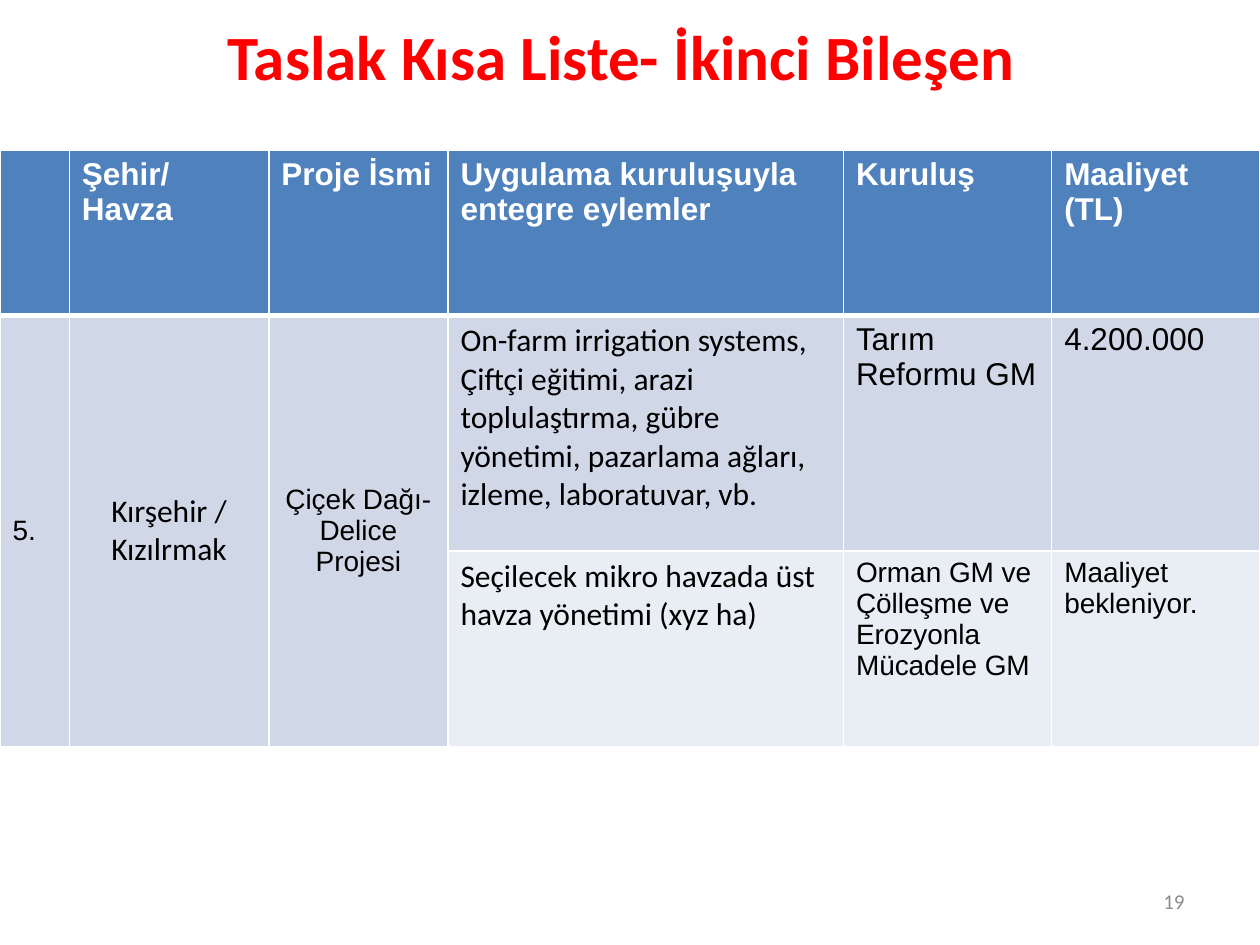
import pptx
import pptx.dml.color
import pptx.enum.text
import pptx.oxml
import pptx.oxml.ns
import pptx.util

Pt = pptx.util.Pt
RGBColor = pptx.dml.color.RGBColor
ALIGN = pptx.enum.text.PP_ALIGN
MIDDLE = pptx.enum.text.MSO_ANCHOR.MIDDLE
TOP = pptx.enum.text.MSO_ANCHOR.TOP

RED = RGBColor(0xFF, 0x00, 0x00)
GREY = RGBColor(0x8C, 0x8C, 0x8C)
WHITE = RGBColor(0xFF, 0xFF, 0xFF)
BLACK = RGBColor(0x00, 0x00, 0x00)
HEADER_BLUE = RGBColor(0x4F, 0x81, 0xBD)
BAND_DARK = RGBColor(0xD0, 0xD8, 0xE8)
BAND_LIGHT = RGBColor(0xE9, 0xED, 0xF4)

COLUMN_WIDTHS = (39.6, 114, 102.4, 226, 119, 119)
ROW_HEIGHTS = (94.3, 134.6, 111.6)
ROW_FILLS = (HEADER_BLUE, BAND_DARK, BAND_LIGHT)
MERGED_COLUMNS = 3

HEADINGS = ("", "Şehir/Havza", "Proje İsmi", "Uygulama kuruluşuyla entegre eylemler",
            "Kuruluş", "Maaliyet (TL)")
PROJECT_ROWS = (
    (("5.", "Arial", 16, ALIGN.LEFT),
     ("Kırşehir / Kızılrmak", "Calibri", 18, ALIGN.CENTER),
     ("Çiçek Dağı- Delice Projesi", "Arial", 16, ALIGN.CENTER),
     ("On-farm irrigation systems, Çiftçi eğitimi, arazi toplulaştırma, gübre yönetimi, "
      "pazarlama ağları, izleme, laboratuvar, vb.", "Calibri", 18, ALIGN.LEFT),
     ("Tarım Reformu GM", "Arial", 18, ALIGN.LEFT),
     ("4.200.000", "Arial", 18, ALIGN.LEFT)),
    (("Seçilecek mikro havzada üst havza yönetimi (xyz ha)", "Calibri", 18, ALIGN.LEFT),
     ("Orman GM ve Çölleşme ve Erozyonla Mücadele GM", "Arial", 16, ALIGN.LEFT),
     ("Maaliyet bekleniyor.", "Arial", 16, ALIGN.LEFT)),
)


def write_text(frame, wording, align, color, font_format):
    """Write one formatted paragraph into a text frame."""
    paragraph = frame.paragraphs[0]
    paragraph.alignment = align
    run = paragraph.add_run()
    run.text = wording
    for name, value in font_format.items():
        setattr(run.font, name, value)
    run.font.color.rgb = color


def add_label(slide, bounds, wording, align, color, font_format):
    """Add a wrapped, vertically centred text box."""
    label = slide.shapes.add_textbox(*(Pt(length) for length in bounds))
    label.text_frame.word_wrap = True
    label.text_frame.vertical_anchor = MIDDLE
    write_text(label.text_frame, wording, align, color, font_format)


def style_cell(cell, row, fill):
    """Give a cell white borders, heavier under the header, and its fill."""
    widths = {"L": 1, "R": 1, "T": 3 if row == 1 else 1, "B": 3 if row == 0 else 1}
    properties = cell._tc.get_or_add_tcPr()
    for side, width in widths.items():
        properties.append(pptx.oxml.parse_xml(
            f'<a:ln{side} {pptx.oxml.ns.nsdecls("a")} w="{Pt(width)}"><a:solidFill>'
            f'<a:srgbClr val="{WHITE}"/></a:solidFill></a:ln{side}>'))
    cell.fill.solid()
    cell.fill.fore_color.rgb = fill


def add_project_table(slide):
    """Add the table of projects, actions, institutions and costs."""
    frame = slide.shapes.add_table(len(ROW_HEIGHTS), len(COLUMN_WIDTHS), 0, Pt(86),
                                   Pt(sum(COLUMN_WIDTHS)), Pt(sum(ROW_HEIGHTS)))
    projects = frame.table
    for column, width in zip(projects.columns, COLUMN_WIDTHS):
        column.width = Pt(width)
    for index, (height, fill) in enumerate(zip(ROW_HEIGHTS, ROW_FILLS)):
        projects.rows[index].height = Pt(height)
        for cell in projects.rows[index].cells:
            style_cell(cell, index, fill)

    for index, heading in enumerate(HEADINGS):
        if heading:
            write_text(projects.cell(0, index).text_frame, heading, ALIGN.LEFT, WHITE,
                       {"name": "Arial", "size": Pt(18), "bold": True})
    for index in range(MERGED_COLUMNS):
        projects.cell(1, index).merge(projects.cell(2, index))
    for row, entries in enumerate(PROJECT_ROWS, start=1):
        first = len(COLUMN_WIDTHS) - len(entries)
        for column, (wording, font, size, align) in enumerate(entries, start=first):
            cell = projects.cell(row, column)
            cell.vertical_anchor = MIDDLE if column < MERGED_COLUMNS else TOP
            write_text(cell.text_frame, wording, align, BLACK,
                       {"name": font, "size": Pt(size), "bold": False})


def main():
    """Build and save the shortlist slide."""
    deck = pptx.Presentation()
    deck.slide_width, deck.slide_height = Pt(720), Pt(540)
    slide = deck.slides.add_slide(deck.slide_layouts[6])
    add_label(slide, (31, -13.7, 648, 90), "Taslak Kısa Liste- İkinci Bileşen",
              ALIGN.CENTER, RED, {"name": "Calibri", "size": Pt(36), "bold": True})
    add_label(slide, (516, 500.5, 168, 28.75), "19", ALIGN.RIGHT, GREY,
              {"name": "Calibri", "size": Pt(12)})
    add_project_table(slide)
    deck.save("out.pptx")


if __name__ == "__main__":
    main()
